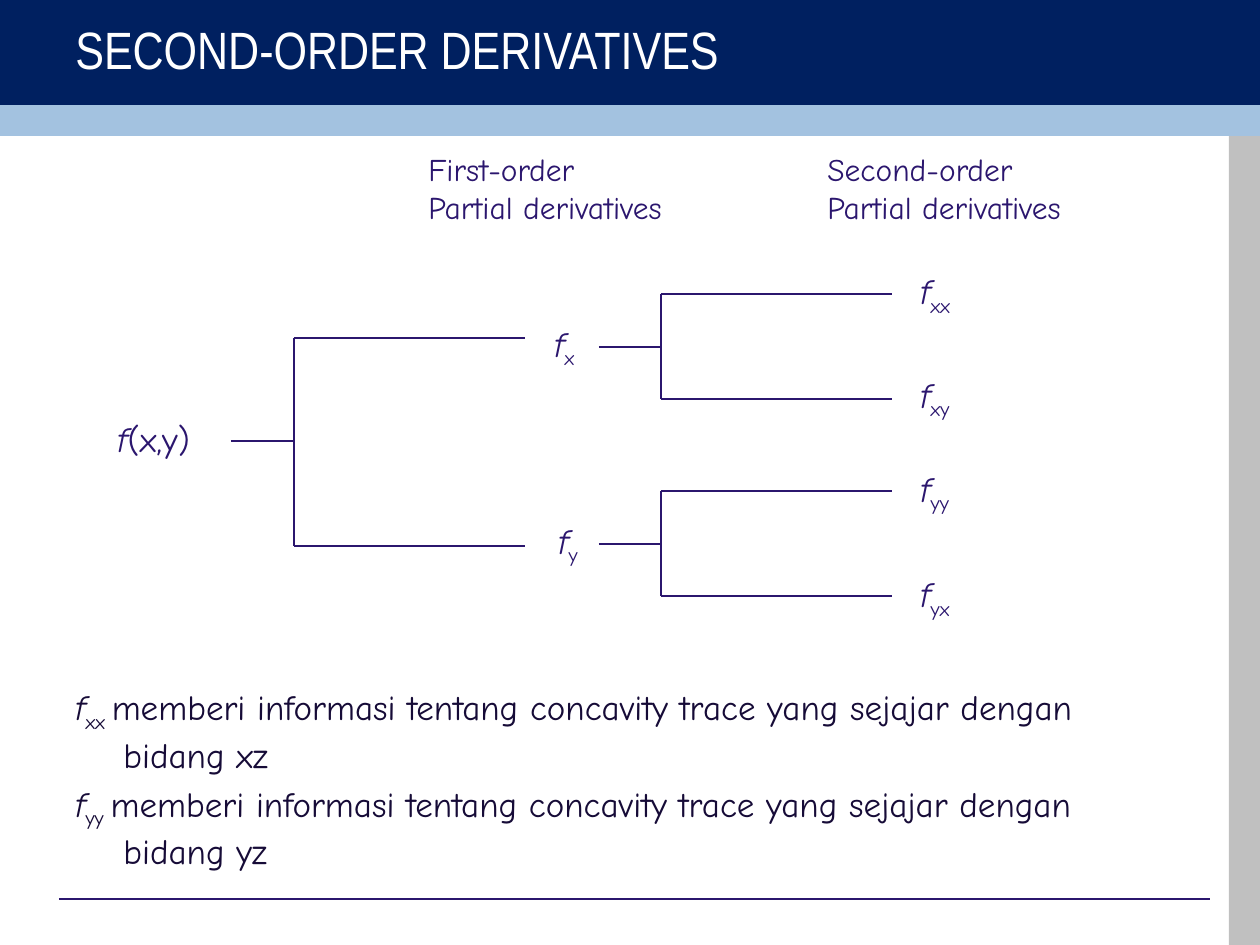
from lxml import etree
from pptx import Presentation, util as u
from pptx.dml.color import RGBColor
from pptx.enum import shapes, text
from pptx.oxml.ns import qn

PX = 914400 / 126
NAVY = RGBColor(0x00, 0x20, 0x60)
SKY = RGBColor(0xA3, 0xC2, 0xE0)
GREY = RGBColor(0xC0, 0xC0, 0xC0)
WHITE = RGBColor(0xFF, 0xFF, 0xFF)
VIOLET = RGBColor(0x2B, 0x16, 0x6E)
INK = RGBColor(0x16, 0x0B, 0x37)
HAND = "Comic Neue"


def px(*values):
    return [u.Emu(round(v * PX)) for v in values]


def add_band(s, box, color):
    sp = s.shapes.add_shape(shapes.MSO_SHAPE.RECTANGLE, *px(*box))
    sp.shadow.inherit = False
    sp.fill.solid()
    sp.fill.fore_color.rgb = color
    sp.line.fill.background()


def add_line(s, x1, y1, x2, y2):
    line = s.shapes.add_connector(shapes.MSO_CONNECTOR.STRAIGHT, *px(x1, y1, x2, y2))
    line.line.color.rgb = VIOLET
    line.line.width = u.Pt(0.75)
    etree.SubElement(line._element.spPr, qn("a:effectLst"))


def add_bracket(s, xs, ys):
    """Stem from the middle, a spine, and one branch at each end."""
    start, spine, end = xs
    top, middle, bottom = ys
    add_line(s, start, middle, spine, middle)
    add_line(s, spine, top, spine, bottom)
    for y in (top, bottom):
        add_line(s, spine, y, end, y)


def add_run(p, words, size=20, color=VIOLET, name=HAND, italic=False, sub=False):
    r = p.add_run()
    r.text = words
    for key, value in {"size": u.Pt(size), "name": name, "italic": italic}.items():
        setattr(r.font, key, value)
    r.font.color.rgb = color
    if sub:
        r._r.get_or_add_rPr().set("baseline", "-25000")


def add_box(s, box, anchor=text.MSO_ANCHOR.TOP):
    tf = s.shapes.add_textbox(*px(*box)).text_frame
    tf.word_wrap = True
    tf.vertical_anchor = anchor
    return tf


def add_f(p, index, color=VIOLET):
    add_run(p, "f", color=color, italic=True)
    add_run(p, index, color=color, sub=True)


def add_heading(s, x, order):
    tf = add_box(s, (x, 144, 403, 88))
    add_run(tf.paragraphs[0], order, size=18)
    add_run(tf.add_paragraph(), "Partial derivatives", size=18)


def add_notes(s, box, indices):
    tf = add_box(s, box)
    for i, (index, plane) in enumerate(indices):
        p = tf.add_paragraph() if i else tf.paragraphs[0]
        p.space_before = u.Pt(4 if i else 0)
        indent, = px(48)
        pPr = p._p.get_or_add_pPr()
        pPr.set("marL", str(indent))
        pPr.set("indent", str(-indent))
        add_f(p, index + " ", INK)
        add_run(p, "memberi informasi tentang concavity trace yang sejajar "
                   f"dengan bidang {plane}", color=INK)


def main():
    prs = Presentation()
    prs.slide_width, prs.slide_height = px(1260, 945)
    s = prs.slides.add_slide(prs.slide_layouts[6])

    # Frame and title
    add_band(s, (1229, 135, 31, 810), GREY)
    add_line(s, 59, 899, 1210, 899)
    add_band(s, (0, 0, 1260, 105), NAVY)
    add_band(s, (0, 105, 1260, 31), SKY)
    tf = add_box(s, (63, 10, 851, 78), text.MSO_ANCHOR.MIDDLE)
    add_run(tf.paragraphs[0], "SECOND-ORDER DERIVATIVES", 30, WHITE, "Arial Narrow")

    # Column headings
    add_heading(s, 416, "First-order")
    add_heading(s, 815, "Second-order")

    # Tree: function, first-order and second-order derivatives
    p = add_box(s, (105, 411, 117, 54)).paragraphs[0]
    add_run(p, "f", italic=True)
    add_run(p, "(x,y)")
    add_bracket(s, (231, 294, 525), (338, 441, 546))
    for top in (294, 491):
        add_bracket(s, (599, 661, 892), (top, top + 53, top + 105))
    for index, x, y in (("x", 542, 316), ("y", 546, 513), ("xx", 908, 263),
                        ("xy", 908, 367), ("yy", 908, 461), ("yx", 908, 566)):
        add_f(add_box(s, (x, y, 28 + 21 * (1 + len(index)) // 2 + 10, 54)).paragraphs[0], index)

    # Explanations
    add_notes(s, (63, 679, 1134, 193), (("xx", "xz"), ("yy", "yz")))

    prs.save("out.pptx")


if __name__ == "__main__":
    main()
